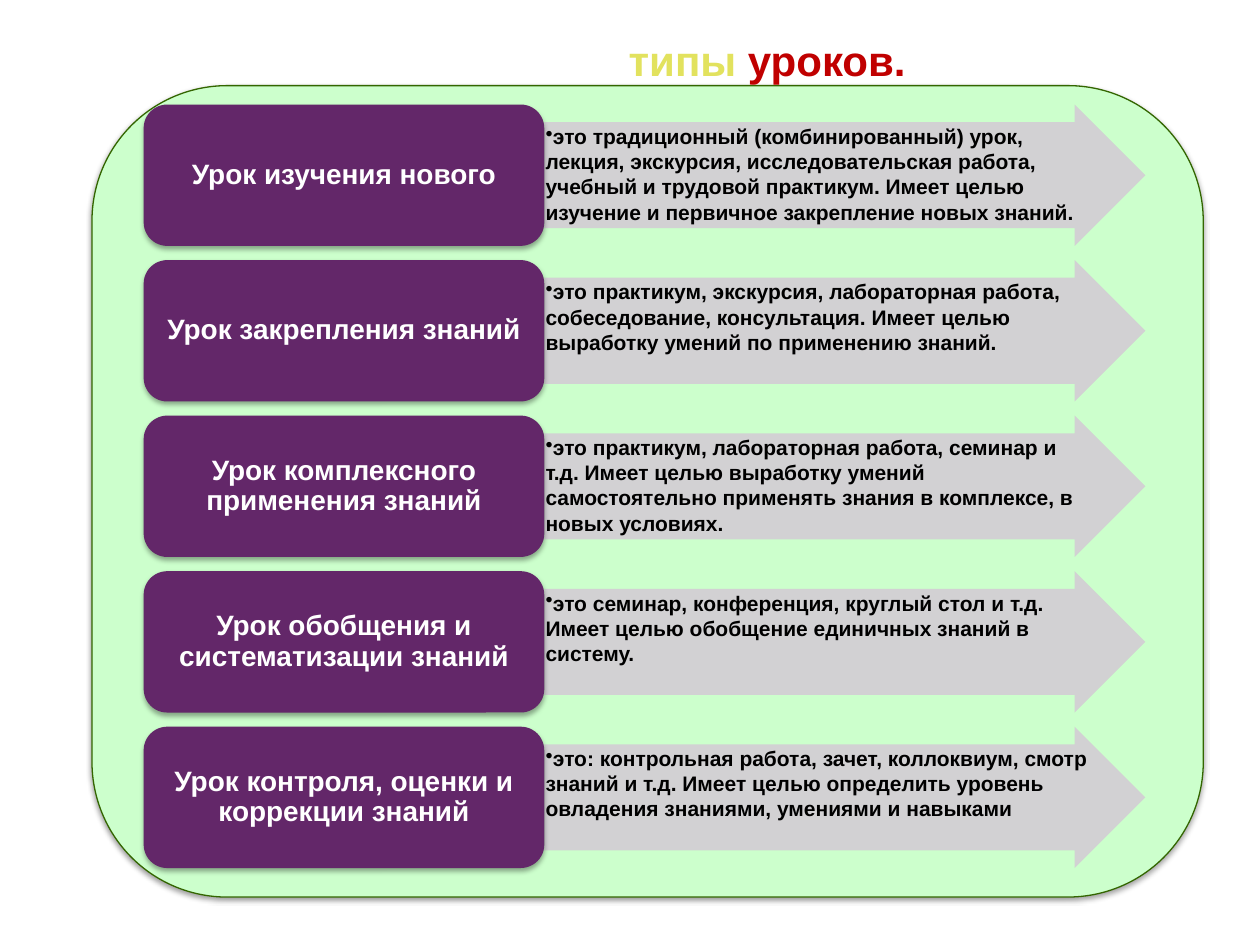
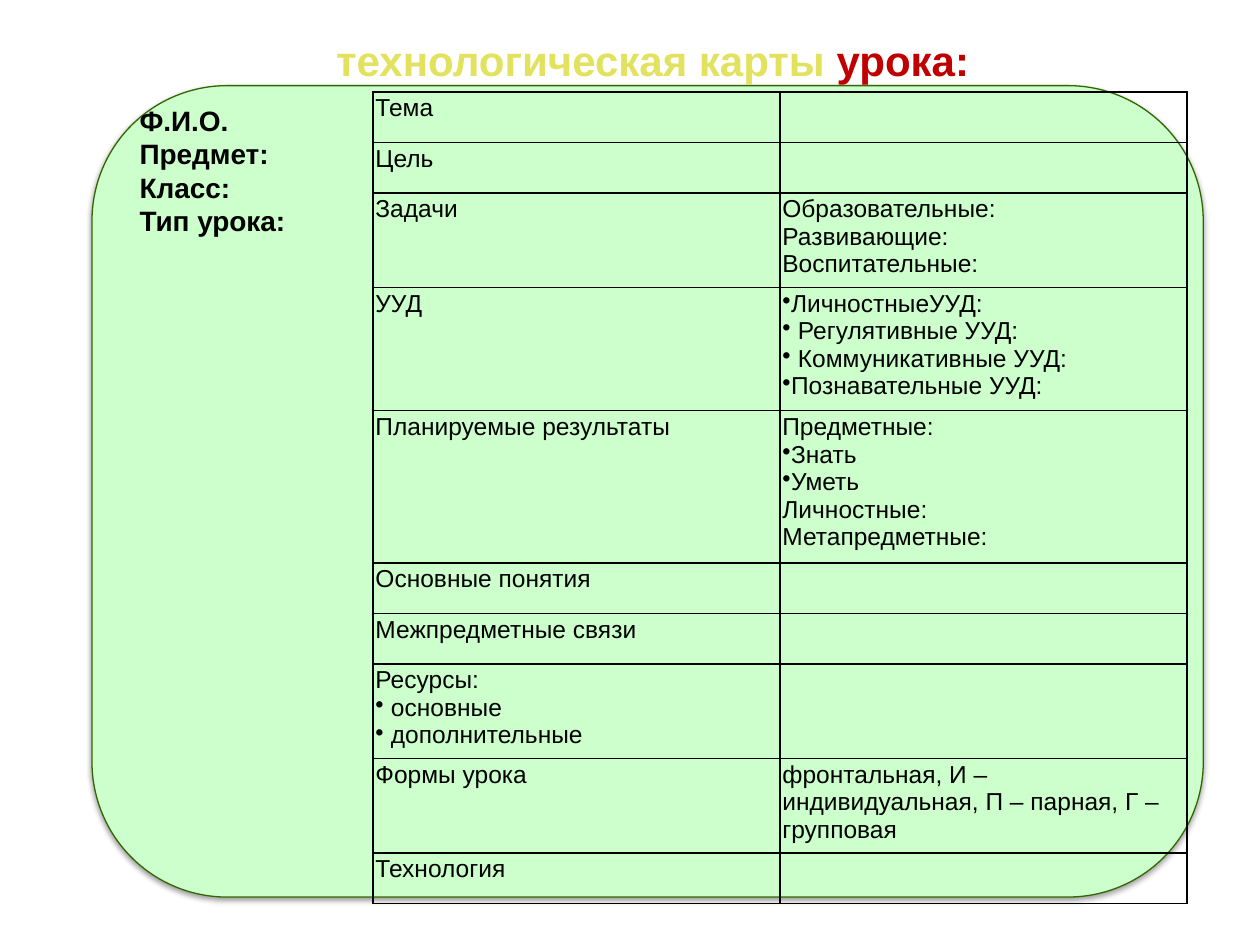
from pptx import Presentation
from pptx.dml.color import RGBColor
from pptx.enum.shapes import MSO_SHAPE
from pptx.enum.text import MSO_ANCHOR, PP_ALIGN
from pptx.oxml import parse_xml
from pptx.oxml.ns import nsdecls, qn
from pptx.util import Inches, Pt

ROUND, ARROW = MSO_SHAPE.ROUNDED_RECTANGLE, MSO_SHAPE.RIGHT_ARROW
TOP, MIDDLE = MSO_ANCHOR.TOP, MSO_ANCHOR.MIDDLE
LEFT, CENTER, JUSTIFY = PP_ALIGN.LEFT, PP_ALIGN.CENTER, PP_ALIGN.JUSTIFY

WHITE = RGBColor(0xFF, 0xFF, 0xFF)
BLACK = RGBColor(0, 0, 0)
YELLOW = RGBColor(0xE2, 0xE2, 0x5E)
RED = RGBColor(0xC0, 0, 0)
MINT = RGBColor(0xCC, 0xFF, 0xCC)
GREEN = RGBColor(0x33, 0x66, 0)
PLUM = RGBColor(0x63, 0x27, 0x69)
GREY = RGBColor(0xD3, 0xCD, 0xD4)

FONT = "Arial"
WIDE, HIGH = 10, 7.5
TITLE = (0.95, 0.17, 8.46, 0.61)
PANEL = (0.73, 0.68, 8.82, 6.44)
LIST = (1.14, 0.83, 7.95, 6.06)
HEAD = (1.01, 0.77, 1.6, 1.18)
CARD = (2.96, 0.73, 6.46, 6.44)
SHARE, GAP = 0.4, 0.1
BASE, STEP, LEAST = 0.06, 0.23, 0.4

TYPES = [
    ("Урок изучения нового",
     "это традиционный (комбинированный) урок, лекция, экскурсия, "
     "исследовательская работа, учебный и трудовой практикум. Имеет целью "
     "изучение и первичное закрепление новых знаний."),
    ("Урок закрепления знаний",
     "это практикум, экскурсия, лабораторная работа, собеседование, "
     "консультация. Имеет целью выработку умений по применению знаний."),
    ("Урок комплексного применения знаний",
     "это практикум, лабораторная работа, семинар и т.д. Имеет целью "
     "выработку умений самостоятельно применять знания в комплексе, в новых "
     "условиях."),
    ("Урок обобщения и систематизации знаний",
     "это семинар, конференция, круглый стол и т.д. Имеет целью обобщение "
     "единичных знаний в систему."),
    ("Урок контроля, оценки и коррекции знаний",
     "это: контрольная работа, зачет, коллоквиум, смотр знаний и т.д. Имеет "
     "целью определить уровень овладения знаниями, умениями и навыками"),
]
FIELDS = ["Ф.И.О.", "Предмет:", "Класс:", "Тип урока:"]
ROWS = [
    (1, ["Тема"], []),
    (1, ["Цель"], []),
    (3, ["Задачи"], ["Образовательные:", "Развивающие:", "Воспитательные:"]),
    (4, ["УУД"], ["•ЛичностныеУУД:", "• Регулятивные УУД:",
                  "• Коммуникативные УУД:", "•Познавательные УУД:"]),
    (5, ["Планируемые результаты"],
     ["Предметные:", "•Знать", "•Уметь", "Личностные:", "Метапредметные:"]),
    (1, ["Основные понятия"], []),
    (1, ["Межпредметные связи"], []),
    (3, ["Ресурсы:", "• основные", "• дополнительные"], []),
    (3, ["Формы урока"],
     ["фронтальная, И – индивидуальная, П – парная, Г – групповая"]),
    (1, ["Технология"], []),
]


def place(box):
    """Turn a box in inches into lengths."""
    return [Inches(side) for side in box]


def glow(blur, dist, turn, alpha):
    """Make the element for a black outer shadow."""
    return parse_xml(
        f'<a:outerShdw {nsdecls("a")} blurRad="{Pt(blur)}" dist="{Pt(dist)}" '
        f'dir="{turn * 60000}" algn="ctr" rotWithShape="0">'
        f'<a:srgbClr val="000000"><a:alpha val="{alpha * 1000}"/></a:srgbClr>'
        '</a:outerShdw>')


def style(font, size, color, bold):
    """Set the look of a font."""
    font.size, font.bold, font.name = Pt(size), bold, FONT
    font.color.rgb = color


def write(frame, lines, size, color, bold=True, align=LEFT):
    """Fill a frame with lines; a leading bullet sign makes a list item."""
    frame.word_wrap = True
    frame.text = "\n".join(line.removeprefix("•") for line in lines)
    for line, para in zip(lines, frame.paragraphs):
        para.alignment = align
        if line.startswith("•"):
            prop = para._p.get_or_add_pPr()
            prop.set("marL", "0")
            prop.set("indent", "0")
            prop.append(parse_xml(f'<a:buChar {nsdecls("a")} char="•"/>'))
        for run in para.runs:
            style(run.font, size, color, bold)


def inset(frame, side, edge):
    """Set the side and edge margins of a frame."""
    frame.margin_left = frame.margin_right = Inches(side)
    frame.margin_top = frame.margin_bottom = Inches(edge)


def block(slide, kind, box, fill, shade=None):
    """Add a filled shape without a line, with a shadow if asked."""
    shape = slide.shapes.add_shape(kind, *place(box))
    shape.shadow.inherit = False
    shape.fill.solid()
    shape.fill.fore_color.rgb = fill
    shape.line.fill.background()
    if shade:
        shape._element.spPr.find(qn("a:effectLst")).append(glow(*shade))
    return shape


def frame_slide(deck, parts):
    """Add a slide with the shared panel and a title of coloured parts."""
    slide = deck.slides.add_slide(deck.slide_layouts[6])
    panel = block(slide, ROUND, PANEL, MINT, (3.1, 1.6, 90, 38))
    panel.line.color.rgb = GREEN
    panel.line.width = Pt(0.75)
    frame = slide.shapes.add_textbox(*place(TITLE)).text_frame
    frame.word_wrap = True
    frame.vertical_anchor = MIDDLE
    para = frame.paragraphs[0]
    para.alignment = CENTER
    for text, color in parts:
        run = para.add_run()
        run.text = text
        style(run.font, 24, color, True)
        shade = parse_xml(f'<a:effectLst {nsdecls("a")}/>')
        shade.append(glow(3, 3, 45, 50))
        run.font._element.find(qn("a:solidFill")).addnext(shade)
    return slide


def type_list(slide, box):
    """Stack the lesson types, each a label with an arrow beside it."""
    left, top, width, height = box
    count = len(TYPES)
    tall = height / (count + GAP * (count - 1))
    split = width * SHARE
    for row, (name, about) in enumerate(TYPES):
        y = top + row * tall * (1 + GAP)
        arrow = block(slide, ARROW,
                      (left + split, y, width - split, tall), GREY)
        arrow.adjustments[0], arrow.adjustments[1] = 0.75, 0.5
        tint = arrow._element.spPr.find(qn("a:solidFill"))[0]
        tint.append(parse_xml(f'<a:alpha {nsdecls("a")} val="90000"/>'))
        frame = arrow.text_frame
        inset(frame, 0.01, 0.01)
        frame.vertical_anchor = TOP
        write(frame, ["•" + about], 12, BLACK)
        label = block(slide, ROUND, (left, y, split, tall), PLUM,
                      (3.1, 1.8, 90, 35))
        frame = label.text_frame
        inset(frame, 0.07, 0.03)
        frame.vertical_anchor = MIDDLE
        write(frame, [name], 16, WHITE, align=CENTER)
        frame.paragraphs[0].line_spacing = 0.9


def outline(cell):
    """Clear the fill of a cell and draw its four black borders."""
    cell.fill.background()
    prop = cell._tc.get_or_add_tcPr()
    for spot, side in enumerate("LRTB"):
        prop.insert(spot, parse_xml(
            f'<a:ln{side} {nsdecls("a")} w="{Pt(1)}"><a:solidFill>'
            f'<a:srgbClr val="{BLACK}"/></a:solidFill></a:ln{side}>'))


def card_table(slide, box):
    """Draw the lesson card with rows as tall as their line counts ask."""
    table = slide.shapes.add_table(len(ROWS), 2, *place(box)).table
    table.first_row = table.horz_banding = False
    for row, (count, *texts) in enumerate(ROWS):
        tall = LEAST if count == 1 else BASE + STEP * count
        table.rows[row].height = Inches(tall)
        for col, lines in enumerate(texts):
            cell = table.cell(row, col)
            inset(cell, 0.02, 0.02)
            outline(cell)
            if lines:
                write(cell.text_frame, lines, 14, BLACK, False)


def main():
    """Build both slides and save them."""
    deck = Presentation()
    deck.slide_width, deck.slide_height = Inches(WIDE), Inches(HIGH)
    slide = frame_slide(deck, [("Основные ", WHITE), ("типы ", YELLOW),
                               ("уроков.", RED)])
    type_list(slide, LIST)
    slide = frame_slide(deck, [("технологическая карты ", YELLOW),
                               ("урока:", RED)])
    head = slide.shapes.add_textbox(*place(HEAD))
    write(head.text_frame, FIELDS, 16, BLACK, align=JUSTIFY)
    card_table(slide, CARD)
    deck.save("out.pptx")


if __name__ == "__main__":
    main()
